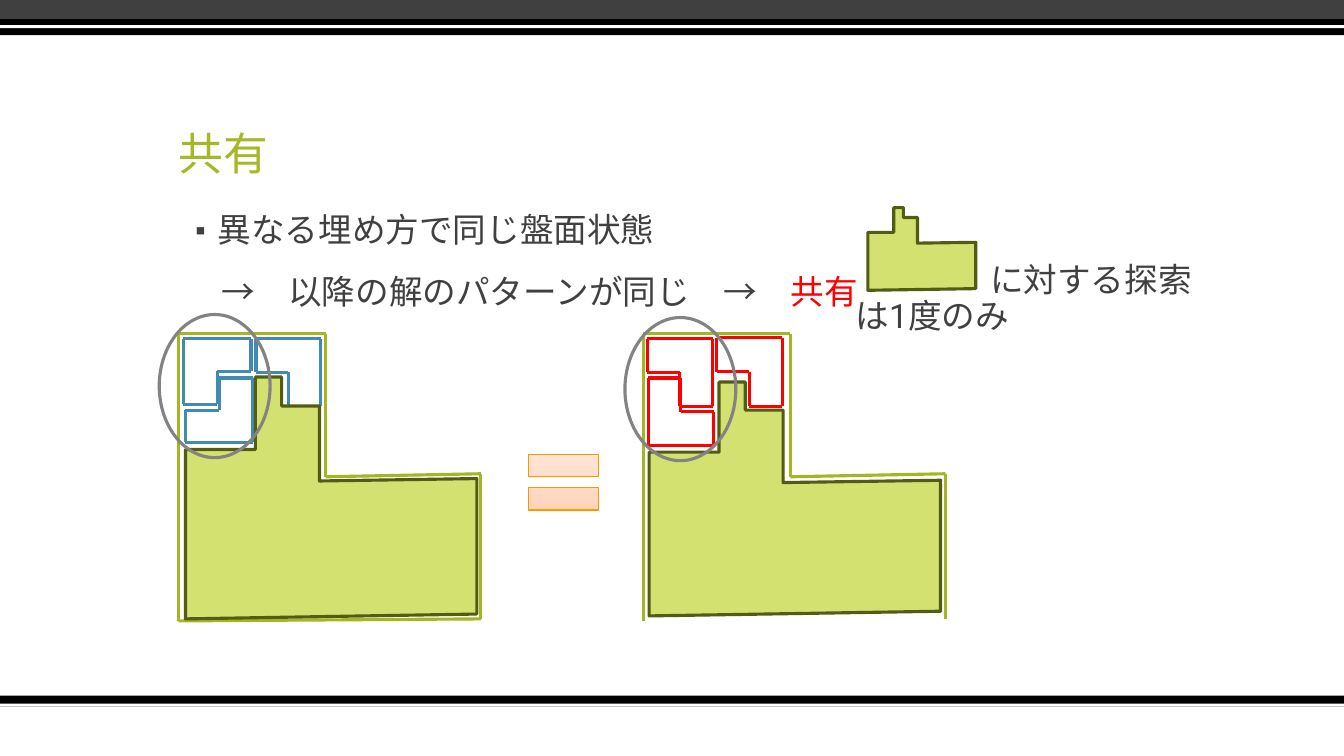
import copy

import lxml.etree
import pptx
import pptx.dml.color
import pptx.enum.dml
import pptx.enum.shapes
import pptx.enum.text
import pptx.oxml
import pptx.oxml.ns
import pptx.util

Color = pptx.dml.color.RGBColor
Preset = pptx.enum.shapes.MSO_SHAPE
qn = pptx.oxml.ns.qn

BLACK = Color(0x00, 0x00, 0x00)
WHITE = Color(0xFF, 0xFF, 0xFF)
CHARCOAL = Color(0x40, 0x40, 0x40)
TITLE_GREEN = Color(0xA6, 0xB7, 0x27)
BOARD_GREEN = Color(0xA5, 0xB6, 0x23)
REGION_FILL = Color(0xD3, 0xE1, 0x71)
REGION_LINE = Color(0x53, 0x5C, 0x14)
BLUE = Color(0x41, 0x8A, 0xB3)
RED = Color(0xFF, 0x00, 0x00)
GRAY = Color(0x83, 0x83, 0x83)
ORANGE = Color(0xF8, 0x9B, 0x00)
EQUAL_STOPS = [(0, Color(0xFF, 0xCC, 0xAB)), (0.35, Color(0xFF, 0xD8, 0xC1)), (1, Color(0xFF, 0xEB, 0xE1))]

CELL = pptx.util.Inches(0.1)
COLUMNS, ROWS = 133.33, 75
JAPANESE = "Noto Sans CJK JP"
STROKE = 2.25

REGION = [(0, 1), (0, 0.3), (0.24, 0.3), (0.24, 0), (0.33, 0), (0.33, 0.12), (0.46, 0.12),
          (0.46, 0.42), (0.46, 0.43), (1, 0.42), (1, 0.98)]
BOARD = [(0, 28.5), (0, 0), (14.6, 0), (14.6, 14.2), (30, 13.9), (30, 28.3)]


def cells(*counts):
    return [pptx.util.Emu(round(count * CELL)) for count in counts]


def apply(target, values):
    for name, value in values.items():
        setattr(target, name, value)


class Page:
    def __init__(self, deck):
        self.slide = deck.slides.add_slide(deck.slide_layouts[1])
        self.shapes = self.slide.shapes
        self.paragraph_format = {"line_spacing": 0.9, "alignment": pptx.enum.text.PP_ALIGN.LEFT}

    def finish(self, shape, fill, line, width):
        shape.shadow.inherit = False
        if fill is None:
            shape.fill.background()
        else:
            shape.fill.solid()
            shape.fill.fore_color.rgb = fill
        if line is None:
            shape.line.fill.background()
        else:
            shape.line.color.rgb = line
            shape.line.width = pptx.util.Pt(width)
        return shape

    def preset(self, kind, area, fill=None, line=None, width=STROKE):
        return self.finish(self.shapes.add_shape(kind, *cells(*area)), fill, line, width)

    def equal_sign(self, area):
        sign = self.preset(Preset.MATH_EQUAL, area, WHITE, ORANGE, 1)
        sign.fill.gradient()
        sign.fill.gradient_angle = 90
        stops = sign.fill.gradient_stops
        first = sign.element.spPr.find(".//" + qn("a:gs"))
        first.addnext(copy.deepcopy(first))
        stops = sign.fill.gradient_stops
        for stop, (position, color) in zip(stops, EQUAL_STOPS):
            stop.position = position
            stop.color.rgb = color

    def region(self, left, top, width, height):
        points = [cells(left + x * width, top + y * height) for x, y in REGION]
        builder = self.shapes.build_freeform(*points[0], scale=1.0)
        builder.add_line_segments(points[1:], close=True)
        self.finish(builder.convert_to_shape(), REGION_FILL, REGION_LINE, STROKE)

    def outline(self, points, color):
        group = self.shapes.add_group_shape()
        for start, end in zip(points, points[1:]):
            edge = group.shapes.add_connector(
                pptx.enum.shapes.MSO_CONNECTOR.STRAIGHT, *cells(*start, *end))
            apply(edge.line, {"width": pptx.util.Pt(STROKE)})
            edge.line.color.rgb = color
            lxml.etree.SubElement(edge.element.spPr, qn("a:effectLst"))

    def board(self, left, top, closed):
        points = [(left + x, top + y) for x, y in BOARD]
        self.outline(points + points[:1] if closed else points, BOARD_GREEN)

    def piece(self, left, top, width, height, missing, color):
        x, y = missing
        shares = [(1 - x, 1 - y), (x, 1 - y), (x, 0.5), (0.5, 0.5), (0.5, y), (1 - x, y), (1 - x, 1 - y)]
        self.outline([(left + a * width, top + b * height) for a, b in shares], color)

    def place(self, box, area):
        apply(box, dict(zip(("left", "top", "width", "height"), cells(*area))))

    def frame(self, box, anchor):
        apply(box.text_frame, {"word_wrap": True, "vertical_anchor": anchor,
                               "auto_size": pptx.enum.text.MSO_AUTO_SIZE.NONE})
        return box.text_frame

    def paragraph(self, para, spans, size, margin=0, indent=0, before=0, bullet=None, font=JAPANESE):
        apply(para, {**self.paragraph_format, "space_before": pptx.util.Pt(before)})
        properties = para._p.get_or_add_pPr()
        for name, count in (("marL", margin), ("indent", indent)):
            properties.set(name, str(cells(count)[0]))
        if bullet:
            color = lxml.etree.SubElement(properties, qn("a:buClr"))
            lxml.etree.SubElement(color, qn("a:srgbClr")).set("val", str(CHARCOAL))
            lxml.etree.SubElement(properties, qn("a:buSzPct")).set("val", "80000")
            lxml.etree.SubElement(properties, qn("a:buFont")).set("typeface", JAPANESE)
            lxml.etree.SubElement(properties, qn("a:buChar")).set("char", bullet)
        else:
            lxml.etree.SubElement(properties, qn("a:buNone"))
        for text, color in spans:
            span = para.add_run()
            span.text = text
            apply(span.font, {"size": pptx.util.Pt(size), "name": font})
            span.font.color.rgb = color
            east = lxml.etree.Element(qn("a:ea"), typeface=JAPANESE)
            span.font._element.find(qn("a:latin")).addnext(east)

    def title(self, text, area):
        box = self.shapes.title
        self.place(box, area)
        frame = self.frame(box, pptx.enum.text.MSO_ANCHOR.BOTTOM)
        self.paragraph(frame.paragraphs[0], [(text, TITLE_GREEN)], 32)

    def body(self, items, area):
        box = self.slide.placeholders[1]
        self.place(box, area)
        frame = self.frame(box, pptx.enum.text.MSO_ANCHOR.TOP)
        for number, item in enumerate(items):
            para = frame.add_paragraph() if number else frame.paragraphs[0]
            self.paragraph(para, size=24, before=18, **item)

    def note(self, text, area, indent):
        box = self.shapes.add_textbox(*cells(*area))
        frame = self.frame(box, pptx.enum.text.MSO_ANCHOR.TOP)
        self.paragraph(frame.paragraphs[0], [(text, CHARCOAL)], 24, indent=indent, font="Roboto")


def main():
    deck = pptx.Presentation()
    deck.slide_width, deck.slide_height = cells(COLUMNS, ROWS)
    page = Page(deck)

    for top, height, color in [(69, 1.1, BLACK), (69.8, 0.3, WHITE), (0, 1.9, CHARCOAL),
                               (1.9, 1.6, BLACK), (2.5, 0.3, WHITE)]:
        page.preset(Preset.RECTANGLE, (0, top, COLUMNS, height), color)

    page.title("共有", (16.7, 6.7, 100, 11.7))
    page.body([
        {"spans": [("異なる埋め方で同じ盤面状態", CHARCOAL)], "margin": 3, "indent": -3, "bullet": "▪"},
        {"spans": [("→　以降の解のパターンが同じ　→　", CHARCOAL), ("共有", RED)], "margin": 3.33},
    ], (17.6, 20.7, 100, 45))

    page.board(17.7, 33.1, True)
    page.board(63.8, 33.1, False)

    for left, top, width, height, missing, color in [
        (18.2, 33.6, 6.7, 6.5, (1, 1), BLUE),
        (18.4, 37.5, 6.7, 6.4, (0, 0), BLUE),
        (25.4, 33.6, 6.4, 6.7, (0, 1), BLUE),
        (71.1, 33.5, 6.5, 6.8, (0, 1), RED),
        (64.3, 37.5, 6.5, 6.7, (1, 0), RED),
        (64.2, 33.6, 6.5, 6.7, (0, 1), RED),
    ]:
        page.piece(left, top, width, height, missing, color)

    for area in [(64.4, 37.9, 28.9, 23.2), (18.4, 37.4, 28.9, 24), (86.1, 20.6, 10.7, 8.2)]:
        page.region(*area)

    page.note("に対する探索は1度のみ", (83.9, 25.6, 37, 8.3), 13.33)
    page.equal_sign((51.2, 43.2, 9.4, 9.3))
    for left, top in [(15.8, 31.2), (62, 31.5)]:
        page.preset(Preset.OVAL, (left, top, 11, 14.2), line=GRAY)

    deck.save("out.pptx")


if __name__ == "__main__":
    main()
